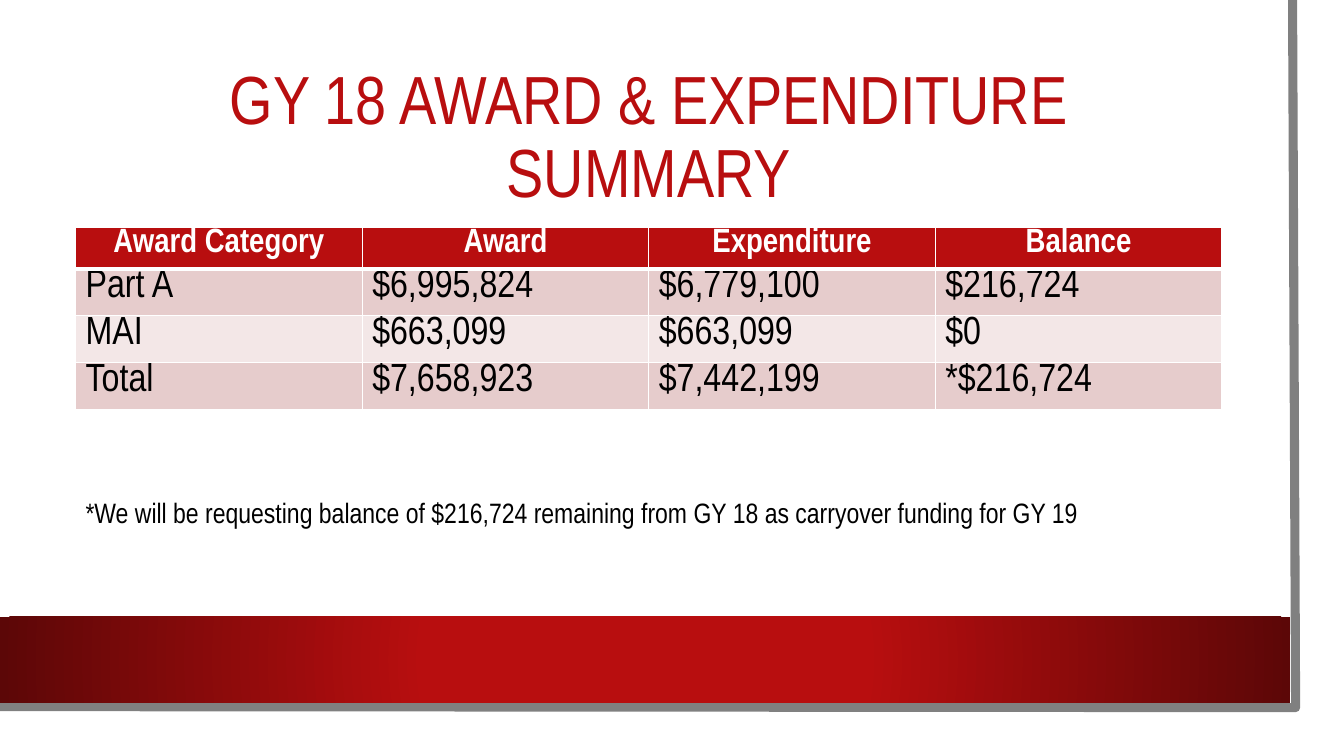
from lxml import etree
from pptx import Presentation
from pptx import util as u
from pptx.dml.color import RGBColor
from pptx.enum import shapes, text
from pptx.oxml import parse_xml
from pptx.oxml.ns import nsdecls, qn

FONT = "Arial Narrow"
COLORS = {"red": "B80E0F", "dark_red": "5C0707", "gray": "808080", "white": "FFFFFF",
          "black": "000000", "odd_row": "E6CCCC", "even_row": "F3E7E7"}
SLIDE_WIDTH, SLIDE_HEIGHT = 13.33, 7.5
LEFT, CONTENT_WIDTH = 0.75, 11.37
AWARDS = [
    ["Award Category", "Award", "Expenditure", "Balance"],
    ["Part A", "$6,995,824", "$6,779,100", "$216,724"],
    ["MAI", "$663,099", "$663,099", "$0"],
    ["Total", "$7,658,923", "$7,442,199", "*$216,724"],
]


def color(name):
    return RGBColor.from_string(COLORS[name])


def inches(*lengths):
    return [u.Inches(length) for length in lengths]


def format_text(paragraph, size, color_name, bold=False, align=text.PP_ALIGN.LEFT):
    paragraph.alignment = align
    for run in paragraph.runs:
        run.font.name, run.font.size, run.font.bold = FONT, u.Pt(size), bold
        run.font.color.rgb = color(color_name)


def add_frame(slide, right, bottom):
    """Gray edge along the right and bottom of the page, slightly skewed."""
    builder = slide.shapes.build_freeform(*inches(right - 0.03, 0), scale=1.0)
    builder.add_line_segments([inches(right, bottom), inches(-0.03, bottom - 0.01)], close=False)
    edge = builder.convert_to_shape()
    edge.shadow.inherit = False
    edge.fill.background()
    edge.line.color.rgb = color("gray")
    edge.line.width = u.Pt(6.5)


def add_band(slide, box):
    """Red band with a radial gradient that darkens towards its ends."""
    band = slide.shapes.add_shape(shapes.MSO_SHAPE.RECTANGLE, *inches(*box))
    band.shadow.inherit = False
    band.line.fill.background()
    gradient = parse_xml(
        f'<a:gradFill {nsdecls("a")} rotWithShape="1"><a:gsLst>'
        f'<a:gs pos="34000"><a:srgbClr val="{COLORS["red"]}"/></a:gs>'
        f'<a:gs pos="100000"><a:srgbClr val="{COLORS["dark_red"]}"/></a:gs></a:gsLst>'
        '<a:path path="circle"><a:fillToRect l="50000" t="50000" r="50000" b="50000"/>'
        '</a:path></a:gradFill>')
    band._element.spPr.find(qn("a:prstGeom")).addnext(gradient)


def add_title(slide, box):
    title = slide.shapes.title
    title.left, title.top, title.width, title.height = inches(*box)
    frame = title.text_frame
    frame.text = "GY 18 AWARD & EXPENDITURE SUMMARY"
    frame.word_wrap = True
    frame.auto_size = text.MSO_AUTO_SIZE.NONE
    frame.vertical_anchor = text.MSO_ANCHOR.MIDDLE
    frame.paragraphs[0].line_spacing = 0.9
    format_text(frame.paragraphs[0], 48.6, "red", align=text.PP_ALIGN.CENTER)


def set_borders(cell, bottom_width):
    properties = cell._tc.get_or_add_tcPr()
    widths = {"lnL": 1, "lnR": 1, "lnT": 1, "lnB": bottom_width}
    for position, (side, width) in enumerate(widths.items()):
        line = etree.Element(qn(f"a:{side}"), w=str(u.Pt(width)))
        fill = etree.SubElement(line, qn("a:solidFill"))
        etree.SubElement(fill, qn("a:srgbClr"), val=COLORS["white"])
        properties.insert(position, line)


def add_award_table(slide, box, header_height):
    rows, columns = len(AWARDS), len(AWARDS[0])
    table = slide.shapes.add_table(rows, columns, *inches(*box)).table
    row_height = (box[3] - header_height) / (rows - 1)
    for column in table.columns:
        column.width = u.Inches(box[2] / columns)
    for row, values in enumerate(AWARDS):
        header = row == 0
        table.rows[row].height = u.Inches(header_height if header else row_height)
        fill_name = "red" if header else "odd_row" if row % 2 else "even_row"
        for column, value in enumerate(values):
            cell = table.cell(row, column)
            cell.text = value
            cell.margin_top = cell.margin_bottom = 0
            cell.fill.solid()
            cell.fill.fore_color.rgb = color(fill_name)
            set_borders(cell, 3 if header else 1)
            paragraph = cell.text_frame.paragraphs[0]
            if header:
                format_text(paragraph, 24, "white", True, text.PP_ALIGN.CENTER)
            else:
                format_text(paragraph, 28, "black")


def add_footnote(slide, box):
    frame = slide.shapes.add_textbox(*inches(*box)).text_frame
    frame.word_wrap = True
    frame.text = ("*We will be requesting balance of $216,724 remaining from GY 18 "
                  "as carryover funding for GY 19")
    format_text(frame.paragraphs[0], 20, "black")


def main():
    presentation = Presentation()
    presentation.slide_width, presentation.slide_height = inches(SLIDE_WIDTH, SLIDE_HEIGHT)
    slide = presentation.slides.add_slide(presentation.slide_layouts[5])
    add_frame(slide, 12.85, 7.02)
    add_band(slide, (0, 6.12, 12.8, 0.85))
    add_title(slide, (LEFT, 0.75, CONTENT_WIDTH, 1.26))
    add_award_table(slide, (LEFT, 2.26, CONTENT_WIDTH, 1.8), header_height=0.41)
    add_footnote(slide, (LEFT, 4.87, CONTENT_WIDTH, 0.44))
    presentation.save("out.pptx")


if __name__ == "__main__":
    main()
